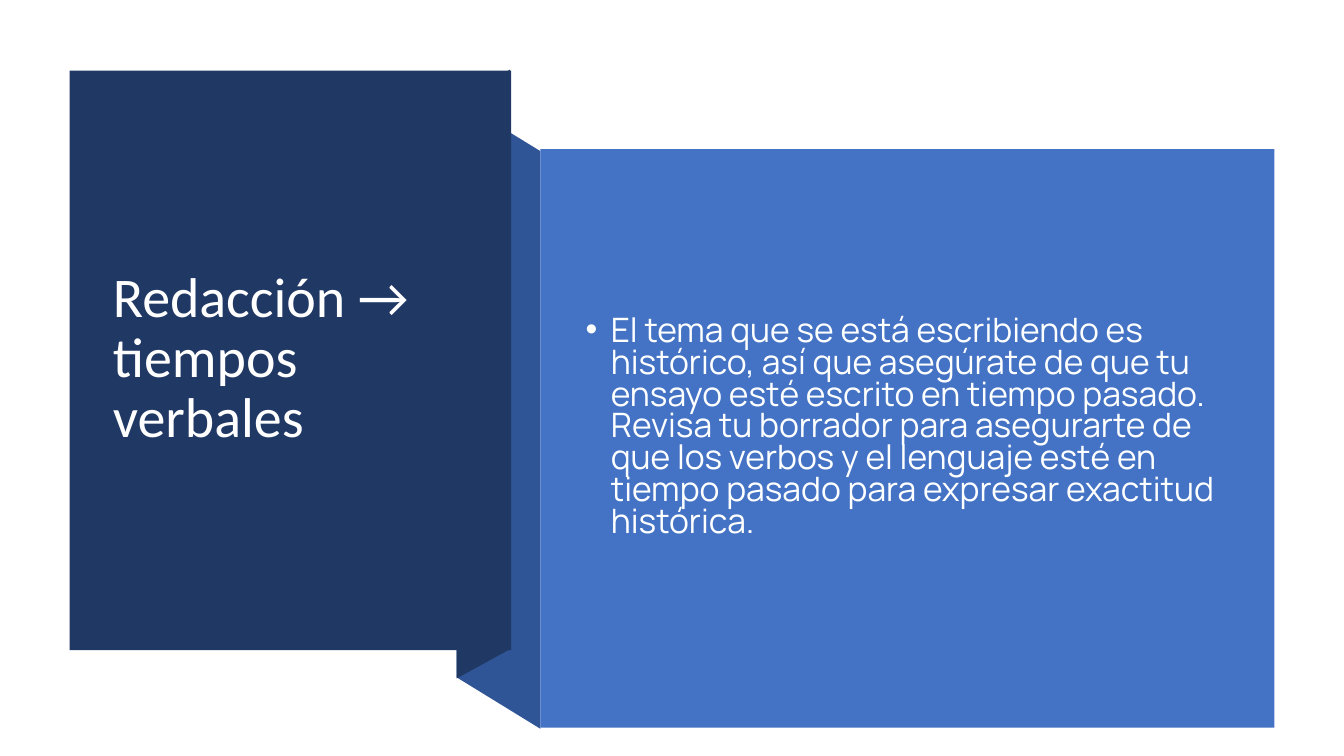
import pptx
import pptx.dml.color
import pptx.enum.shapes
import pptx.enum.text
import pptx.util
from dataclasses import dataclass
from lxml import etree

Inches = pptx.util.Inches
Pt = pptx.util.Pt
Color = pptx.dml.color.RGBColor.from_string


@dataclass(frozen=True)
class Theme:
    navy: str = "203864"
    fold: str = "2F5597"
    blue: str = "4472C4"
    title_text: str = "FFFFFF"
    body_text: str = "FEFFFF"
    title_font: str = "Calibri"
    body_font: str = "Manrope"
    title_size: int = 40
    body_size: int = 24


theme = Theme()


def paint(shape, color):
    shape.shadow.inherit = False
    shape.fill.solid()
    shape.fill.fore_color.rgb = Color(color)
    shape.line.fill.background()


def write(shape, box, text, font, size, color, spacing):
    shape.left, shape.top, shape.width, shape.height = map(Inches, box)
    frame = shape.text_frame
    frame.word_wrap = True
    frame.auto_size = pptx.enum.text.MSO_AUTO_SIZE.NONE
    frame.vertical_anchor = pptx.enum.text.MSO_ANCHOR.MIDDLE
    frame.text = text
    paragraph = frame.paragraphs[0]
    paragraph.alignment = pptx.enum.text.PP_ALIGN.LEFT
    paragraph.line_spacing = spacing
    paragraph.font.name = font
    paragraph.font.size = Pt(size)
    paragraph.font.color.rgb = Color(color)
    return paragraph


presentation = pptx.Presentation()
presentation.slide_width = Inches(13.33)
presentation.slide_height = Inches(7.5)
slide = presentation.slides.add_slide(presentation.slide_layouts[5])
shapes = slide.shapes

ribbon_folds = [
    (theme.fold, [(5.36, 7.23), (4.53, 6.72), (4.53, 0.99), (5.36, 1.5)]),
    (theme.navy, [(5.06, 6.44), (4.53, 6.73), (4.53, 0.98), (5.06, 0.69)]),
]
for color, corners in ribbon_folds:
    points = [(Inches(x), Inches(y)) for x, y in corners]
    builder = shapes.build_freeform(*points[0])
    builder.add_line_segments(points[1:], close=True)
    paint(builder.convert_to_shape(), color)

panels = [
    (theme.navy, (0.69, 0.7, 4.38, 5.75)),
    (theme.blue, (5.36, 1.48, 7.28, 5.74)),
]
for color, box in panels:
    panel = shapes.add_shape(pptx.enum.shapes.MSO_SHAPE.RECTANGLE, *map(Inches, box))
    paint(panel, color)

title = shapes.title
shapes.element.append(title.element)
write(title, (1.02, 1.07, 3.71, 4.99), "Redacción → tiempos verbales",
      theme.title_font, theme.title_size, theme.title_text, 0.9)

advice = shapes.add_textbox(0, 0, 0, 0)
advice_paragraph = write(
    advice, (5.71, 1.88, 6.51, 4.74),
    "El tema que se está escribiendo es histórico, así que asegúrate de que tu ensayo "
    "esté escrito en tiempo pasado. Revisa tu borrador para asegurarte de que los verbos "
    "y el lenguaje esté en tiempo pasado para expresar exactitud histórica.",
    theme.body_font, theme.body_size, theme.body_text, 0.79)
advice_paragraph.space_before = Pt(10)

properties = advice_paragraph._p.get_or_add_pPr()
properties.set("marL", str(Inches(0.25)))
properties.set("indent", str(Inches(-0.25)))
bullet_font = etree.Element(pptx.oxml.ns.qn("a:buFont"), typeface="Arial")
bullet = etree.Element(pptx.oxml.ns.qn("a:buChar"), char="•")
text_defaults = properties.find(pptx.oxml.ns.qn("a:defRPr"))
text_defaults.addprevious(bullet_font)
text_defaults.addprevious(bullet)

presentation.save("out.pptx")
